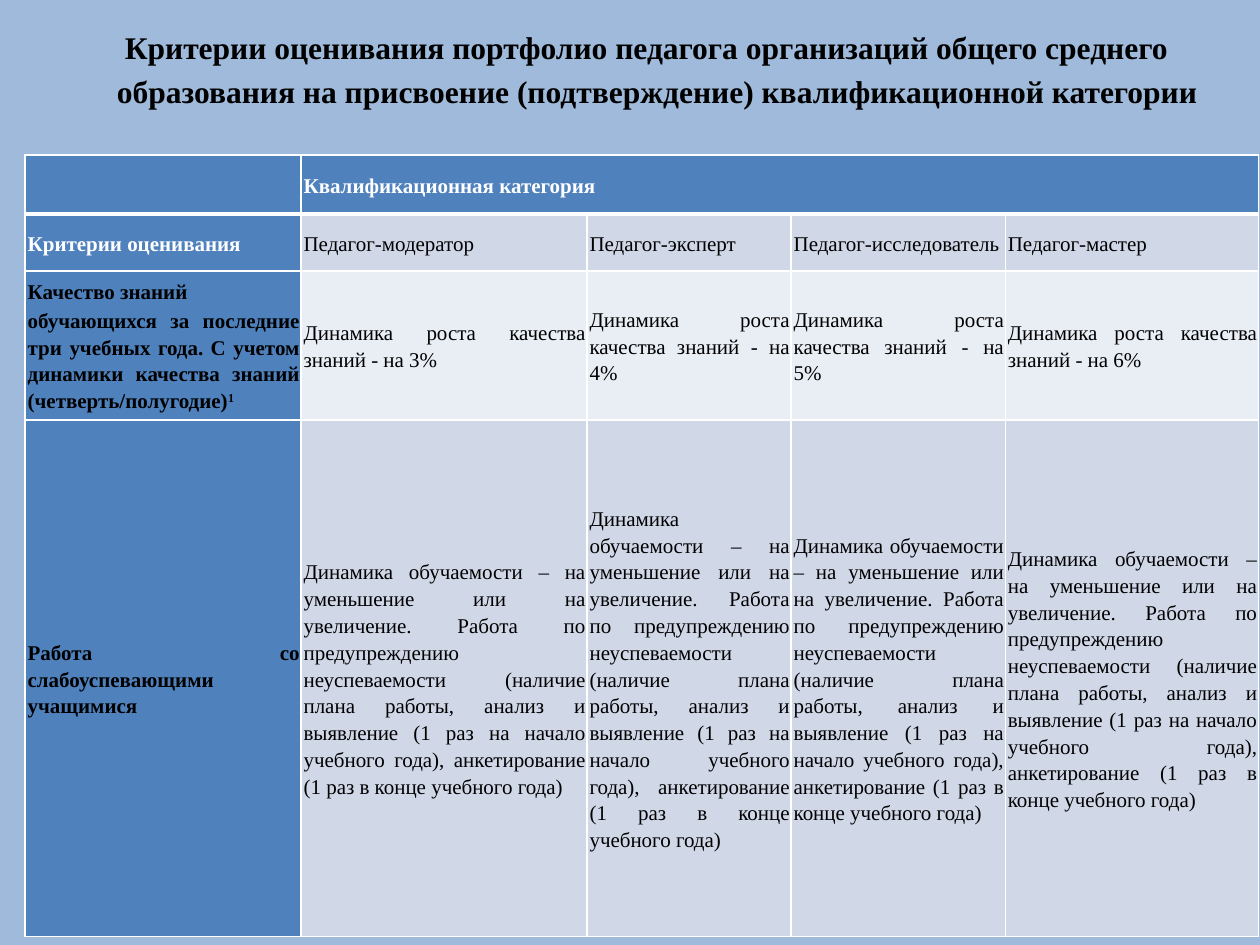
import lxml.etree
import pptx
import pptx.dml.color
import pptx.enum.shapes
import pptx.enum.text
import pptx.oxml.ns
import pptx.util

Inches = pptx.util.Inches
Pt = pptx.util.Pt
ALIGN = pptx.enum.text.PP_ALIGN

COLORS = {
    "background": "95B3D7",
    "header": "4F81BD",
    "band_dark": "D0D8E8",
    "band_light": "E9EDF4",
    "white": "FFFFFF",
    "black": "000000",
}
FONT = "Times New Roman"
TITLE = (" Критерии оценивания портфолио педагога организаций общего среднего "
         "образования на присвоение (подтверждение) квалификационной категории")
CATEGORIES = ["Педагог-модератор", "Педагог-эксперт", "Педагог-исследователь", "Педагог-мастер"]
GROWTH = [f"Динамика роста качества знаний - на {percent}%" for percent in (3, 4, 5, 6)]
SUPPORT = ("Динамика обучаемости – на уменьшение или на увеличение. Работа по предупреждению "
           "неуспеваемости (наличие плана работы, анализ и выявление (1 раз на начало учебного "
           "года), анкетирование (1 раз в конце учебного года)")
QUALITY = ["Качество знаний",
           "обучающихся за последние три учебных года. С учетом динамики качества знаний "
           "(четверть/полугодие)"]
ROWS = [
    (["Критерии оценивания"], CATEGORIES, "white", "band_dark"),
    (QUALITY, GROWTH, "black", "band_light"),
    (["Работа со слабоуспевающими учащимися"], [SUPPORT] * 4, "black", "band_dark"),
]
COLUMN_WIDTHS = [2.19, 2.27, 1.62, 1.7, 2.01]
ROW_HEIGHTS = [0.47, 0.45, 1.13, 4.1]


def rgb(name):
    """Return the named colour."""
    return pptx.dml.color.RGBColor.from_string(COLORS[name])


def write_text(paragraph, text, size=12, color="black", bold=False, align=ALIGN.JUSTIFY,
               space_after=1, superscript=False):
    """Add a formatted run to a paragraph."""
    paragraph.alignment = align
    paragraph.line_spacing = 1.15
    paragraph.space_after = Pt(space_after)
    run = paragraph.add_run()
    run.text = text
    run.font.name = FONT
    run.font.size = Pt(size)
    run.font.bold = bold
    run.font.color.rgb = rgb(color)
    if superscript:
        run.font._element.set("baseline", "30000")


def add_background(slide, left, top, width, height):
    """Cover the box with a translucent rectangle."""
    shape = slide.shapes.add_shape(pptx.enum.shapes.MSO_SHAPE.RECTANGLE, left, top, width, height)
    shape.shadow.inherit = False
    shape.line.fill.background()
    shape.fill.solid()
    shape.fill.fore_color.rgb = rgb("background")
    color = shape._element.spPr.find(".//" + pptx.oxml.ns.qn("a:srgbClr"))
    lxml.etree.SubElement(color, pptx.oxml.ns.qn("a:alpha"), val="90000")


def add_title(slide, left, top, width, height):
    """Place the slide title in the box."""
    text_frame = slide.shapes.add_textbox(left, top, width, height).text_frame
    text_frame.word_wrap = True
    write_text(text_frame.paragraphs[0], TITLE, size=18, bold=True, align=ALIGN.LEFT,
               space_after=10)


def set_borders(cell, bottom_width=1):
    """Draw white borders around a cell."""
    properties = cell._tc.get_or_add_tcPr()
    widths = {"lnL": 1, "lnR": 1, "lnT": 1, "lnB": bottom_width}
    for index, (side, width) in enumerate(widths.items()):
        line = lxml.etree.Element(pptx.oxml.ns.qn("a:" + side), w=str(Pt(width)))
        fill = lxml.etree.SubElement(line, pptx.oxml.ns.qn("a:solidFill"))
        lxml.etree.SubElement(fill, pptx.oxml.ns.qn("a:srgbClr"), val=COLORS["white"])
        properties.insert(index, line)


def fill_cell(cell, texts, fill, color="black", bold=False):
    """Fill a cell with a colour and justified paragraphs."""
    cell.fill.solid()
    cell.fill.fore_color.rgb = rgb(fill)
    cell.vertical_anchor = pptx.enum.text.MSO_ANCHOR.MIDDLE
    cell.margin_left = cell.margin_right = cell.margin_top = cell.margin_bottom = Inches(0.01)
    for index, text in enumerate(texts):
        text_frame = cell.text_frame
        paragraph = text_frame.add_paragraph() if index else text_frame.paragraphs[0]
        write_text(paragraph, text, color=color, bold=bold)
        paragraph._p.get_or_add_pPr().set("marL", str(Inches(0.01)))


def add_criteria_table(slide, left, top, width, height):
    """Place the criteria table in the box."""
    frame = slide.shapes.add_table(len(ROW_HEIGHTS), len(COLUMN_WIDTHS), left, top, width, height)
    table = frame.table
    for column, column_width in zip(table.columns, COLUMN_WIDTHS):
        column.width = Inches(column_width)
    for row, row_height in zip(table.rows, ROW_HEIGHTS):
        row.height = Inches(row_height)

    for column_index in range(len(COLUMN_WIDTHS)):
        texts = ["Квалификационная категория"] if column_index == 1 else []
        cell = table.cell(0, column_index)
        fill_cell(cell, texts, "header", color="white", bold=True)
        set_borders(cell, bottom_width=3)
    table.cell(0, 1).merge(table.cell(0, len(COLUMN_WIDTHS) - 1))

    for row_index, (heading, values, color, band) in enumerate(ROWS, start=1):
        fill_cell(table.cell(row_index, 0), heading, "header", color=color, bold=True)
        for column_index, value in enumerate(values, start=1):
            fill_cell(table.cell(row_index, column_index), [value], band)
        for column_index in range(len(COLUMN_WIDTHS)):
            set_borders(table.cell(row_index, column_index))

    footnote_paragraph = table.cell(2, 0).text_frame.paragraphs[-1]
    write_text(footnote_paragraph, "1", bold=True, superscript=True)


def main():
    """Build and save the presentation."""
    presentation = pptx.Presentation()
    presentation.slide_width = Inches(10)
    presentation.slide_height = Inches(7.5)
    slide = presentation.slides.add_slide(presentation.slide_layouts[6])
    add_background(slide, Inches(-0.01), Inches(-0.02), Inches(10.01), Inches(7.53))
    add_title(slide, Inches(0.83), Inches(0.13), Inches(9.17), Inches(0.34))
    add_criteria_table(slide, Inches(0.2), Inches(1.23), Inches(sum(COLUMN_WIDTHS)),
                       Inches(sum(ROW_HEIGHTS)))
    presentation.save("out.pptx")


if __name__ == "__main__":
    main()
